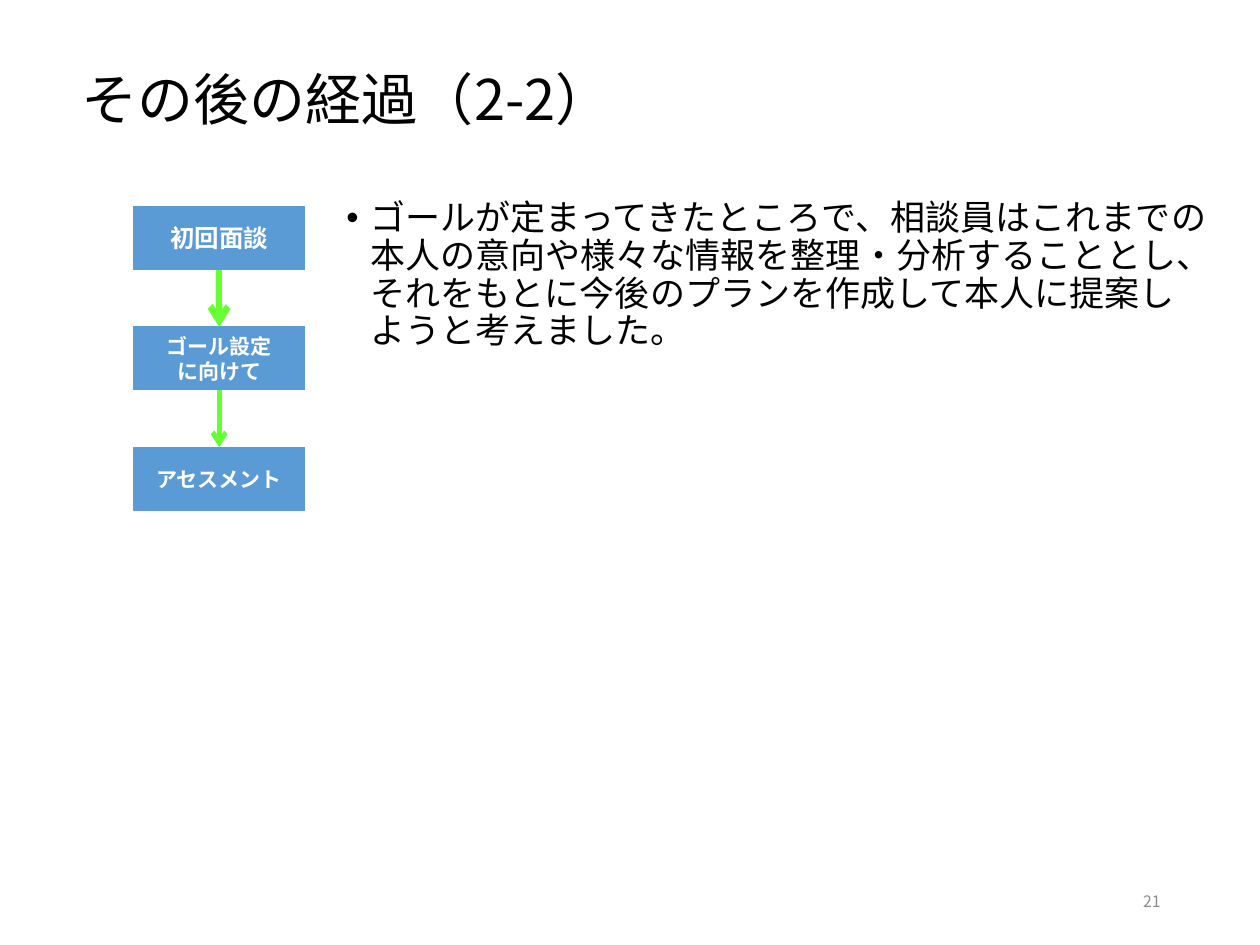
from pptx import Presentation
from pptx import util as u
from pptx.dml.color import RGBColor
from pptx.enum import shapes, text
from pptx.oxml.ns import qn
from lxml import etree

# Content
TITLE = "その後の経過（2-2）"
BODY = ("ゴールが定まってきたところで、相談員はこれまでの本人の意向や様々な情報を"
        "整理・分析することとし、それをもとに今後のプランを作成して本人に提案"
        "しようと考えました。")
PAGE = "21"
STEPS = [  # lines of the box, text size
    (["初回面談"], 14),
    (["ゴール設定", "に向けて"], 12),
    (["アセスメント"], 12),
]
ARROWS = [3.75, 2.75]  # line widths

# Format
FACE = "Noto Sans CJK JP"
HUES = {"ink": "000000", "page": "8C8C8C", "box": "5B9BD5",
        "label": "FFFFFF", "arrow": "66FF33"}
LEFT, TOP, WIDE, HIGH, PITCH = 1.06, 1.64, 1.36, 0.5, 0.955
MID, TOPS = text.MSO_ANCHOR.MIDDLE, text.MSO_ANCHOR.TOP
ALIGN = text.PP_ALIGN


def hue(name):
    return RGBColor.from_string(HUES[name])


def write(shape, lines, size, color, anchor=MID, bold=False, **look):
    frame = shape.text_frame
    frame.word_wrap = True
    frame.vertical_anchor = anchor
    for i, line in enumerate(lines):
        para = frame.add_paragraph() if i else frame.paragraphs[0]
        for key, value in look.items():
            setattr(para, key, value)
        run = para.add_run()
        run.text = line
        font = {"name": FACE, "size": u.Pt(size), "bold": bold}
        for key, value in font.items():
            setattr(run.font, key, value)
        run.font.color.rgb = hue(color)
        # East Asian typeface
        east = etree.SubElement(run.font._element, qn("a:ea"))
        east.set("typeface", FACE)


def add_text(slide, at, *args, **look):
    box = slide.shapes.add_textbox(*map(u.Inches, at))
    write(box, *args, **look)
    return box


def add_bullet(para, indent):
    props = para._p.get_or_add_pPr()
    props.set("marL", str(u.Inches(indent)))
    props.set("indent", str(u.Inches(-indent)))
    etree.SubElement(props, qn("a:buFont")).set("typeface", "Arial")
    etree.SubElement(props, qn("a:buChar")).set("char", "•")


def add_step(slide, top, lines, size):
    box = slide.shapes.add_shape(
        shapes.MSO_SHAPE.RECTANGLE,
        *map(u.Inches, (LEFT, top, WIDE, HIGH)))
    box.shadow.inherit = False
    box.fill.solid()
    box.fill.fore_color.rgb = hue("box")
    box.line.color.rgb = hue("box")
    box.line.width = u.Pt(0.5)
    write(box, lines, size, "label", bold=True, alignment=ALIGN.CENTER)


def add_arrow(slide, start, end, width):
    mid = LEFT + WIDE / 2
    arrow = slide.shapes.add_connector(
        shapes.MSO_CONNECTOR.STRAIGHT,
        *map(u.Inches, (mid, start, mid, end)))
    arrow.line.color.rgb = hue("arrow")
    arrow.line.width = u.Pt(width)
    etree.SubElement(arrow.line._get_or_add_ln(), qn("a:tailEnd")).set("type", "arrow")
    etree.SubElement(arrow._element.spPr, qn("a:effectLst"))


def main():
    deck = Presentation()
    deck.slide_width, deck.slide_height = u.Inches(10), u.Inches(7.5)
    slide = deck.slides.add_slide(deck.slide_layouts[6])

    # Title, page number and body
    add_text(slide, (0.55, 0.09, 8.62, 1.45), [TITLE], 32, "ink",
             line_spacing=0.9)
    add_text(slide, (7.06, 6.95, 2.25, 0.4), [PAGE], 9, "page",
             alignment=ALIGN.RIGHT)
    body = add_text(slide, (2.65, 1.54, 7.05, 5.01), [BODY], 20, "ink",
                    anchor=TOPS, line_spacing=0.9)
    add_bullet(body.text_frame.paragraphs[0], 0.19)

    # Steps, then the arrows between them
    tops = [TOP + i * PITCH for i in range(len(STEPS))]
    for top, (lines, size) in zip(tops, STEPS):
        add_step(slide, top, lines, size)
    for top, after, width in zip(tops, tops[1:], ARROWS):
        add_arrow(slide, top + HIGH, after, width)

    deck.save("out.pptx")


if __name__ == "__main__":
    main()
